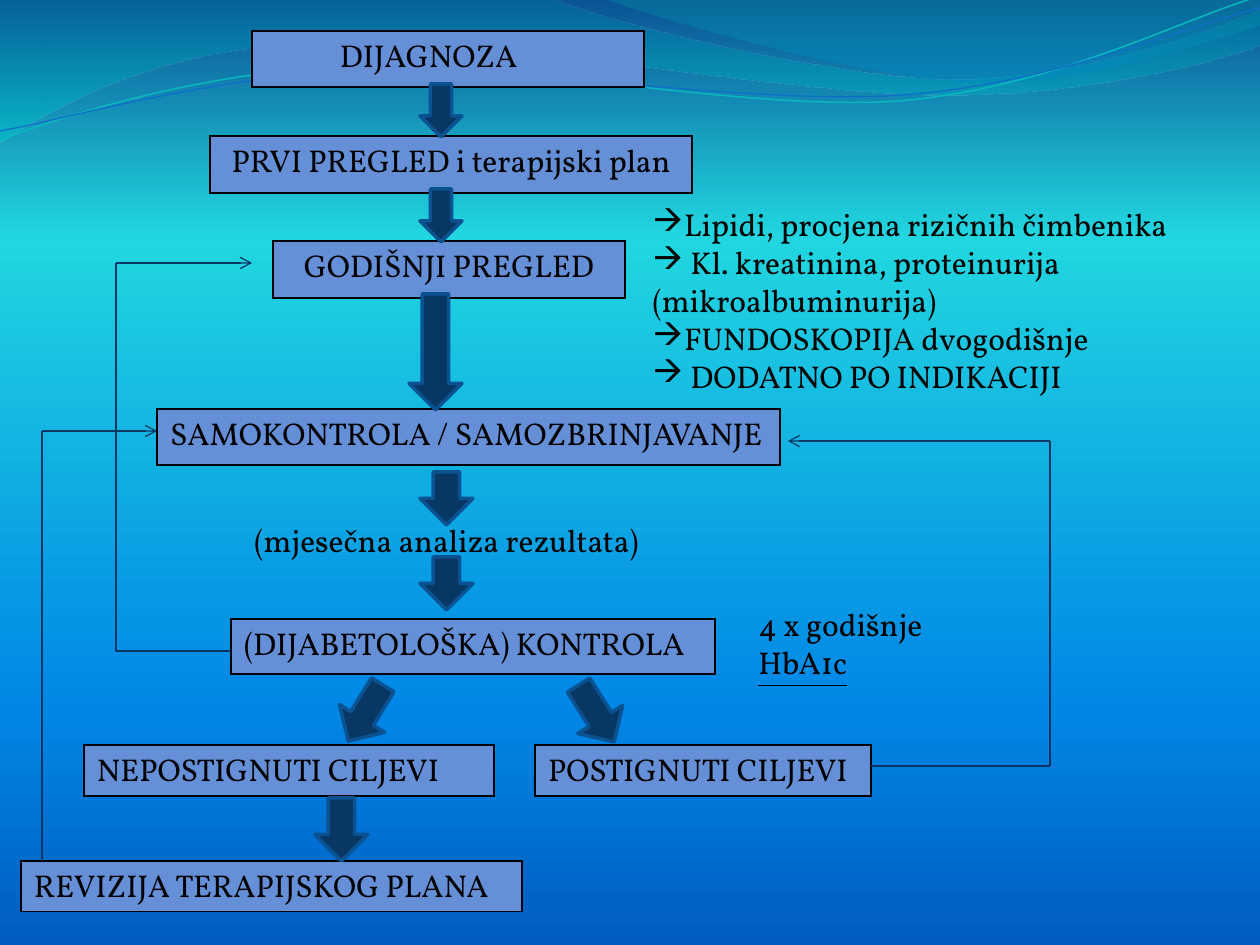
import dataclasses

import pptx
import pptx.dml.color
import pptx.enum.shapes
import pptx.enum.text
import pptx.oxml.ns
import pptx.util
from lxml import etree

PX = 9144000 / 1260
qn = pptx.oxml.ns.qn
SHAPE = pptx.enum.shapes.MSO_SHAPE
CENTER = pptx.enum.text.PP_ALIGN.CENTER


def px(*lengths):
    return [pptx.util.Emu(round(n * PX)) for n in lengths]


def rgb(value):
    return pptx.dml.color.RGBColor.from_string(value)


def sub(parent, tag, **attrs):
    return etree.SubElement(parent, qn(tag), **attrs)


@dataclasses.dataclass(frozen=True)
class Theme:
    font: str = "Vollkorn"
    bullet_font: str = "Wingdings"
    bullet: str = "à"
    size: int = 18
    text: str = "000000"
    box: str = "658FD7"
    arrow: str = "083763"
    arrow_edge: str = "0B5292"
    background: tuple = ((0, "0B5394", 100), (25, "21D6E0", 100),
                         (75, "0087E6", 100), (100, "005CBF", 100))
    wide_wave: tuple = ((0, "0074A1", 45), (100, "00C6CF", 55))
    right_wave: tuple = ((0, "00A1A9", 30), (80, "008BBF", 45))
    teal_line: str = "0AB8BF"
    blue_line: str = "0F6FC6"


class Flowchart:
    """Draws the elements of a flowchart on one slide in one style."""

    def __init__(self, slide, theme):
        self.slide, self.theme = slide, theme

    def gradient(self, fill, root, stops):
        fill.gradient()
        fill.gradient_angle = 270
        gs_list = root.find(".//" + qn("a:gsLst"))
        for gs in list(gs_list):
            gs_list.remove(gs)
        for pos, color, alpha in stops:
            gs = sub(gs_list, "a:gs", pos=str(pos * 1000))
            clr = sub(gs, "a:srgbClr", val=color)
            if alpha < 100:
                sub(clr, "a:alpha", val=str(alpha * 1000))

    def background(self):
        self.gradient(self.slide.background.fill, self.slide.element, self.theme.background)

    def wave(self, start, segments, stops=None, color=None, width=0):
        ends = [seg[-1] for seg in segments]
        fb = self.slide.shapes.build_freeform(*start, scale=PX)
        fb.add_line_segments(ends, close=stops is not None)
        sp = fb.convert_to_shape()
        left, top = (min(values) for values in zip(start, *ends))
        for step, seg in zip(sp.element.findall(".//" + qn("a:lnTo")), segments):
            if len(seg) == 3:
                bezier = etree.Element(qn("a:cubicBezTo"))
                for x, y in seg:
                    sub(bezier, "a:pt", x=str(x - left), y=str(y - top))
                step.getparent().replace(step, bezier)
        sp.shadow.inherit = False
        if stops:
            self.gradient(sp.fill, sp.element, stops)
            sp.line.fill.background()
        else:
            sp.fill.background()
            sp.line.color.rgb = rgb(color)
            sp.line.width = pptx.util.Pt(width)

    def run(self, p, text, underline=None):
        r = p.add_run()
        r.text = text
        r.font.name, r.font.size = self.theme.font, pptx.util.Pt(self.theme.size)
        r.font.color.rgb = rgb(self.theme.text)
        r.font.underline = underline

    def box(self, text, x, y, w, h, indent=13, align=None):
        table = self.slide.shapes.add_table(1, 1, *px(x, y, w, h)).table
        table.first_row = table.horz_banding = False
        cell = table.cell(0, 0)
        cell.margin_left, cell.margin_bottom = px(indent, 0)
        cell.fill.solid()
        cell.fill.fore_color.rgb = rgb(self.theme.box)
        p = cell.text_frame.paragraphs[0]
        p.alignment = align
        self.run(p, text)
        tc_pr = cell._tc.get_or_add_tcPr()
        for i, side in enumerate("LRTB"):
            ln = sub(tc_pr, f"a:ln{side}", w="12700")
            sub(sub(ln, "a:solidFill"), "a:srgbClr", val=self.theme.text)
            tc_pr.insert(i, ln)

    def text(self, lines, x, y, w, h):
        tf = self.slide.shapes.add_textbox(*px(x, y, w, h)).text_frame
        tf.word_wrap = True
        for i, (line, underline) in enumerate(lines):
            p = tf.add_paragraph() if i else tf.paragraphs[0]
            self.run(p, line, underline)

    def bullets(self, items, x, y, w, h):
        sp = self.slide.placeholders[1]
        sp.left, sp.top, sp.width, sp.height = px(x, y, w, h)
        tf = sp.text_frame
        tf.auto_size = pptx.enum.text.MSO_AUTO_SIZE.NONE
        for i, lines in enumerate(items):
            p = tf.add_paragraph() if i else tf.paragraphs[0]
            p.space_before = pptx.util.Pt(0)
            p_pr = p._p.get_or_add_pPr()
            p_pr.set("marL", "0")
            p_pr.set("indent", "0")
            sub(p_pr, "a:buFont", typeface=self.theme.bullet_font, charset="2")
            sub(p_pr, "a:buChar", char=self.theme.bullet)
            for j, line in enumerate(lines):
                if j:
                    p.add_line_break()
                self.run(p, line)

    def arrow(self, x, y, w, h, rotation=0):
        sp = self.slide.shapes.add_shape(SHAPE.DOWN_ARROW, *px(x, y, w, h))
        sp.rotation = rotation
        sp.shadow.inherit = False
        sp.fill.solid()
        sp.fill.fore_color.rgb = rgb(self.theme.arrow)
        sp.line.color.rgb = rgb(self.theme.arrow_edge)
        sp.line.width = pptx.util.Pt(2)

    def route(self, *points):
        for start, end in zip(points, points[1:]):
            line = self.slide.shapes.add_connector(
                pptx.enum.shapes.MSO_CONNECTOR.STRAIGHT, *px(*start, *end))
            line.line.color.rgb = rgb(self.theme.arrow)
            line.line.width = pptx.util.Pt(0.75)
            if end == points[-1]:
                sub(line.line._get_or_add_ln(), "a:tailEnd", type="arrow")
            sub(line._element.spPr, "a:effectLst")


def main():
    prs = pptx.Presentation()
    prs.slide_width, prs.slide_height = px(1260, 945)
    slide = prs.slides.add_slide(prs.slide_layouts[1])
    title = slide.shapes.title.element
    title.getparent().remove(title)
    theme = Theme()
    chart = Flowchart(slide, theme)

    chart.background()
    chart.wave((0, 0), [[(554, -1)], [(600, 21), (837, 79), (955, 79)],
                        [(1075, 79), (1207, 33), (1260, 11)], [(1261, 45)],
                        [(1239, 55), (1096, 96), (940, 95)],
                        [(784, 94), (481, 35), (324, 43)],
                        [(162, 45), (58, 105), (-1, 142)]], theme.wide_wave)
    chart.wave((604, -1), [[(641, 14), (859, 78), (969, 82)],
                           [(1078, 87), (1211, 40), (1260, 26)], [(1260, 0)]],
               theme.right_wave)
    chart.wave((0, 140), [[(60, 117), (199, 72), (349, 66)],
                          [(498, 59), (747, 112), (898, 101)],
                          [(1050, 89), (1182, 19), (1257, -3)]],
               color=theme.teal_line, width=0.85)
    chart.wave((0, 131), [[(59, 121), (207, 77), (357, 71)],
                          [(508, 64), (752, 106), (903, 95)],
                          [(1053, 84), (1186, 26), (1260, 8)]],
               color=theme.blue_line, width=0.75)

    chart.box("DIJAGNOZA", 252, 31, 392, 56, indent=88)
    chart.box("PRVI PREGLED i terapijski plan", 210, 136, 482, 57, align=CENTER)
    chart.box("GODIŠNJI PREGLED", 273, 241, 352, 57, indent=31)
    chart.box("SAMOKONTROLA / SAMOZBRINJAVANJE", 157, 409, 623, 56)
    chart.box("(DIJABETOLOŠKA) KONTROLA", 231, 619, 484, 55)
    chart.box("NEPOSTIGNUTI CILJEVI", 84, 745, 410, 51)
    chart.box("POSTIGNUTI CILJEVI", 535, 745, 336, 51)
    chart.box("REVIZIJA TERAPIJSKOG PLANA", 21, 861, 501, 50)

    chart.bullets([["Lipidi, procjena rizičnih čimbenika"],
                   [" Kl. kreatinina, proteinurija", "(mikroalbuminurija)"],
                   ["FUNDOSKOPIJA dvogodišnje"],
                   [" DODATNO PO INDIKACIJI"]], 640, 199, 620, 242)
    chart.text([("(mjesečna analiza rezultata)", None)], 242, 515, 410, 50)
    chart.text([("4 x godišnje", None), ("HbA1c", True)], 746, 599, 431, 89)

    for arrow in ((420, 84, 42, 53), (420, 189, 42, 53), (409, 294, 53, 116),
                  (420, 472, 53, 53), (420, 557, 53, 53), (339, 680, 53, 66, 31.5),
                  (570, 680, 53, 67, 327.9), (315, 798, 53, 63)):
        chart.arrow(*arrow)

    chart.route((231, 651), (116, 651), (116, 263), (252, 263))
    chart.route((42, 861), (42, 431), (157, 431))
    chart.route((871, 766), (1050, 766), (1050, 441), (788, 441))
    prs.save("out.pptx")


if __name__ == "__main__":
    main()
